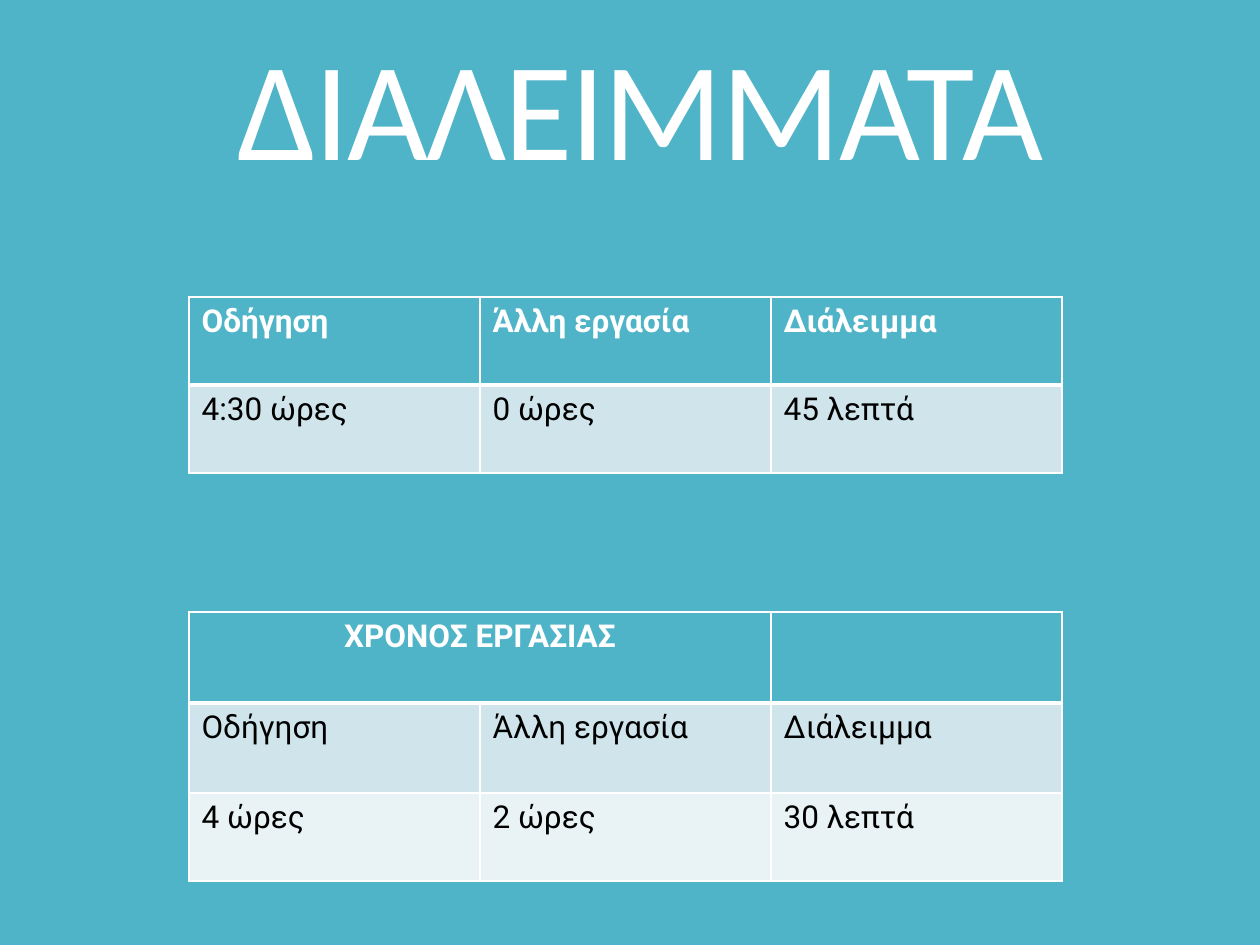
from lxml import etree
from pptx import Presentation
from pptx import util as u
from pptx.dml.color import RGBColor
from pptx.enum import text
from pptx.oxml import ns

PX = 914400 // 126
TEAL = RGBColor(0x50, 0xB4, 0xC8)
PALE = RGBColor(0xD0, 0xE5, 0xEB)
PALEST = RGBColor(0xE9, 0xF2, 0xF5)
WHITE = RGBColor(0xFF, 0xFF, 0xFF)
BLACK = RGBColor(0x00, 0x00, 0x00)

HEADING = "ΔΙΑΛΕΙΜΜΑΤΑ"
HEADING_BOX = (105, 55, 1071, 139)
LEFT, COLUMN_WIDTH = 189, 291
ROW_FILLS = [TEAL, PALE, PALEST]
BREAKS = [
    {
        "top": 612,
        "heights": [91, 90, 88],
        "rows": [
            ["ΧΡΟΝΟΣ ΕΡΓΑΣΙΑΣ", None, ""],
            ["Οδήγηση", "Άλλη εργασία", "Διάλειμμα"],
            ["4 ώρες", "2 ώρες", "30 λεπτά"],
        ],
    },
    {
        "top": 297,
        "heights": [88, 88],
        "rows": [
            ["Οδήγηση", "Άλλη εργασία", "Διάλειμμα"],
            ["4:30 ώρες", "0 ώρες", "45 λεπτά"],
        ],
    },
]


def px(*lengths):
    return [u.Emu(length * PX) for length in lengths]


def add_borders(cell, row):
    widths = {"L": 1, "R": 1, "T": 3 if row == 1 else 1, "B": 3 if row == 0 else 1}
    properties = cell._tc.get_or_add_tcPr()
    for position, (side, width) in enumerate(widths.items()):
        border = etree.Element(ns.qn(f"a:ln{side}"), w=str(u.Pt(width)))
        fill = etree.SubElement(border, ns.qn("a:solidFill"))
        etree.SubElement(fill, ns.qn("a:srgbClr"), val=str(WHITE))
        properties.insert(position, border)


def add_heading(slide):
    box = slide.shapes.add_textbox(*px(*HEADING_BOX))
    frame = box.text_frame
    frame.word_wrap = True
    frame.vertical_anchor = text.MSO_ANCHOR.BOTTOM
    heading = frame.paragraphs[0]
    heading.text = HEADING
    heading.alignment = text.PP_ALIGN.CENTER
    heading.line_spacing = 0.8
    heading.font.name = "Calibri"
    heading.font.size = u.Pt(80)
    heading.font.color.rgb = WHITE
    heading.runs[0].font._element.set("spc", "-120")


def add_breaks(slide, top, heights, rows):
    columns = len(rows[0])
    area = px(LEFT, top, COLUMN_WIDTH * columns, sum(heights))
    table = slide.shapes.add_table(len(rows), columns, *area).table
    for column in table.columns:
        column.width = px(COLUMN_WIDTH)[0]
    for r, (height, entries) in enumerate(zip(heights, rows)):
        table.rows[r].height = px(height)[0]
        for c, entry in enumerate(entries):
            cell = table.cell(r, c)
            cell.fill.solid()
            cell.fill.fore_color.rgb = ROW_FILLS[r]
            add_borders(cell, r)
            if entry is None:
                table.cell(r, c - 1).merge(cell)
                table.cell(r, c - 1).text_frame.paragraphs[0].alignment = text.PP_ALIGN.CENTER
                continue
            label = cell.text_frame.paragraphs[0]
            label.text = entry
            label.font.name = "Roboto"
            label.font.size = u.Pt(18)
            label.font.bold = r == 0
            label.font.color.rgb = WHITE if r == 0 else BLACK


def main():
    deck = Presentation()
    deck.slide_width, deck.slide_height = px(1260, 945)
    slide = deck.slides.add_slide(deck.slide_layouts[6])
    slide.background.fill.solid()
    slide.background.fill.fore_color.rgb = TEAL
    add_heading(slide)
    for breaks in BREAKS:
        add_breaks(slide, **breaks)
    deck.save("out.pptx")


if __name__ == "__main__":
    main()
